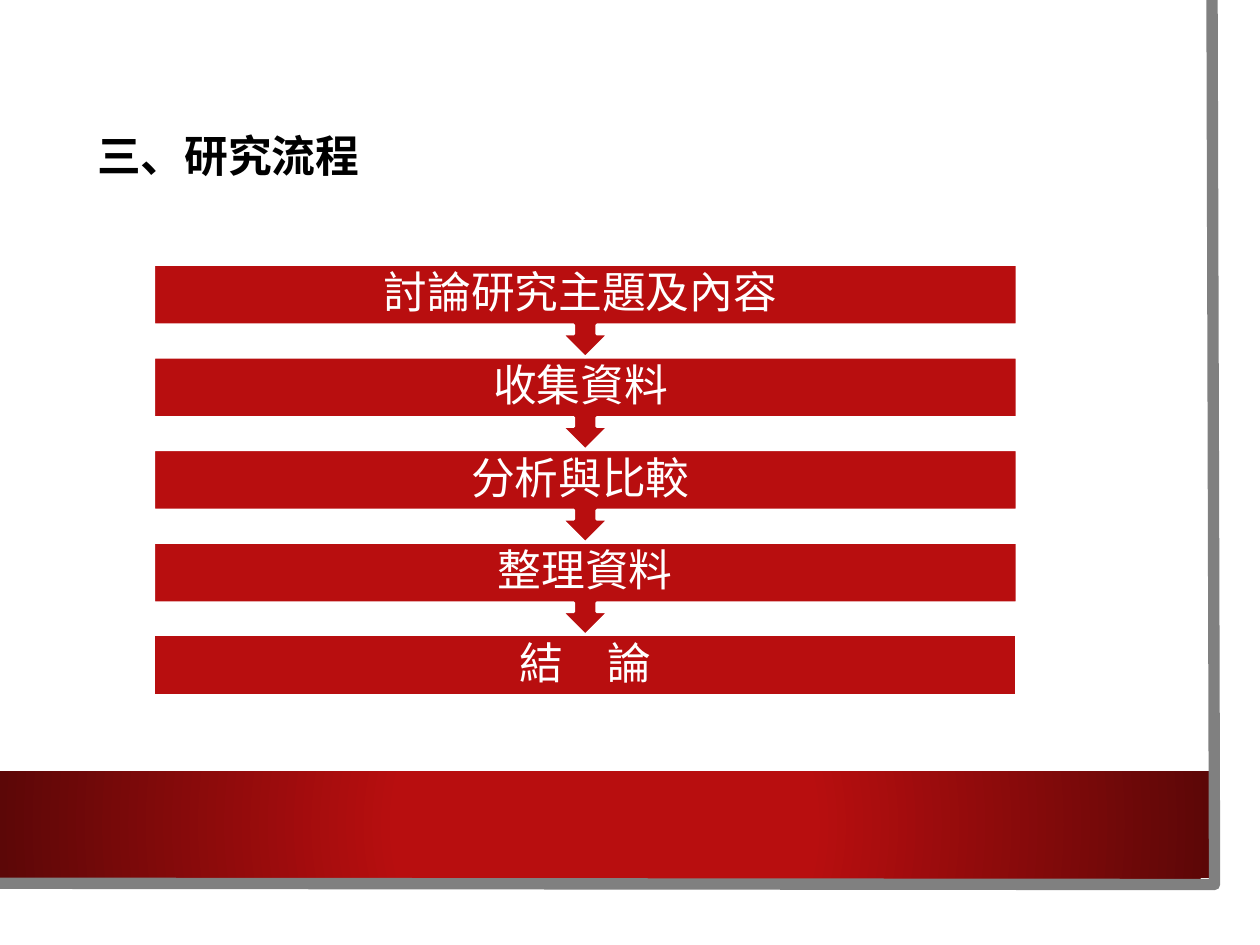
from lxml import etree
from pptx import Presentation
from pptx.dml.color import RGBColor
from pptx.enum.shapes import MSO_SHAPE
from pptx.enum.text import MSO_ANCHOR, PP_ALIGN
from pptx.oxml import parse_xml
from pptx.oxml.ns import nsdecls, qn
from pptx.util import Inches, Pt

COLORS = {
    "red": "B80E0F",
    "dark_red": "5C0707",
    "gray": "808080",
    "white": "FFFFFF",
    "black": "000000",
}
STEPS = ["討論研究主題及內容 ", "收集資料 ", "分析與比較 ", "整理資料", "結　論"]


def color(name):
    return RGBColor.from_string(COLORS[name])


def add_block(slide, kind, left, top, width, height, fill):
    shape = slide.shapes.add_shape(
        kind, Inches(left), Inches(top), Inches(width), Inches(height))
    shape.shadow.inherit = False
    shape.fill.solid()
    shape.fill.fore_color.rgb = color(fill)
    shape.line.fill.background()
    return shape


def set_radial_gradient(shape, stops):
    shape.fill.gradient()
    for stop, (position, name) in zip(shape.fill.gradient_stops, stops):
        stop.position = position
        stop.color.rgb = color(name)
    gradient = shape._element.spPr.find(qn("a:gradFill"))
    gradient.remove(gradient.find(qn("a:lin")))
    gradient.append(parse_xml(f'<a:path {nsdecls("a")} path="circle"/>'))
    center = etree.SubElement(gradient.find(qn("a:path")), qn("a:fillToRect"))
    for side in "ltrb":
        center.set(side, "50000")


def add_backdrop(slide, left, top, width, height):
    add_block(slide, MSO_SHAPE.RECTANGLE, left, top, width, height, "white")
    band = add_block(slide, MSO_SHAPE.RECTANGLE,
                     left, top + 6.12, 9.6, 0.85, "red")
    set_radial_gradient(band, [(0.34, "red"), (1, "dark_red")])

    builder = slide.shapes.build_freeform(
        Inches(left + 9.62), Inches(top), scale=1.0)
    builder.add_line_segments(
        [(Inches(left + 9.64), Inches(top + 7.02)),
         (Inches(left - 0.02), Inches(top + 7.01))], close=False)
    edge = builder.convert_to_shape()
    edge.shadow.inherit = False
    edge.fill.background()
    edge.line.color.rgb = color("gray")
    edge.line.width = Pt(6.5)


def set_title(slide, left, top, width, height):
    title = slide.shapes.title
    title.left, title.top = Inches(left), Inches(top)
    title.width, title.height = Inches(width), Inches(height)
    slide.shapes._spTree.append(title._element)
    frame = title.text_frame
    frame.text = "三、研究流程"
    frame.vertical_anchor = MSO_ANCHOR.TOP
    frame.margin_top = Inches(0.43)
    paragraph = frame.paragraphs[0]
    paragraph.alignment = PP_ALIGN.LEFT
    paragraph.font.name = "Arial"
    paragraph.font.size = Pt(25)
    paragraph.font.bold = True
    paragraph.font.color.rgb = color("black")


def add_flow(slide, left, top, width, height):
    bar_height = 0.48
    pitch = (height - bar_height) / (len(STEPS) - 1)
    for index, text in reversed(list(enumerate(STEPS))):
        is_last = index == len(STEPS) - 1
        kind = MSO_SHAPE.RECTANGLE if is_last else MSO_SHAPE.DOWN_ARROW_CALLOUT
        step = add_block(slide, kind, left, top + index * pitch, width,
                         bar_height if is_last else pitch, "red")
        step.line.color.rgb = color("white")
        step.line.width = Pt(1.5)
        frame = step.text_frame
        frame.text = text
        frame.word_wrap = True
        frame.vertical_anchor = MSO_ANCHOR.MIDDLE
        frame.margin_top = frame.margin_bottom = 0
        frame.margin_left = frame.margin_right = Inches(0.19)
        paragraph = frame.paragraphs[0]
        paragraph.alignment = PP_ALIGN.CENTER
        paragraph.line_spacing = 0.9
        paragraph.font.name = "Arial"
        paragraph.font.size = Pt(25)
        paragraph.font.color.rgb = color("white")


def main():
    presentation = Presentation()
    presentation.slide_width = Inches(10)
    presentation.slide_height = Inches(7.5)
    slide = presentation.slides.add_slide(presentation.slide_layouts[5])
    add_backdrop(slide, 0, 0, 9.83, 7.27)
    set_title(slide, 0.67, 0.59, 7.09, 1.85)
    add_flow(slide, 1.22, 2.1, 6.85, 3.42)
    presentation.save("out.pptx")


if __name__ == "__main__":
    main()
